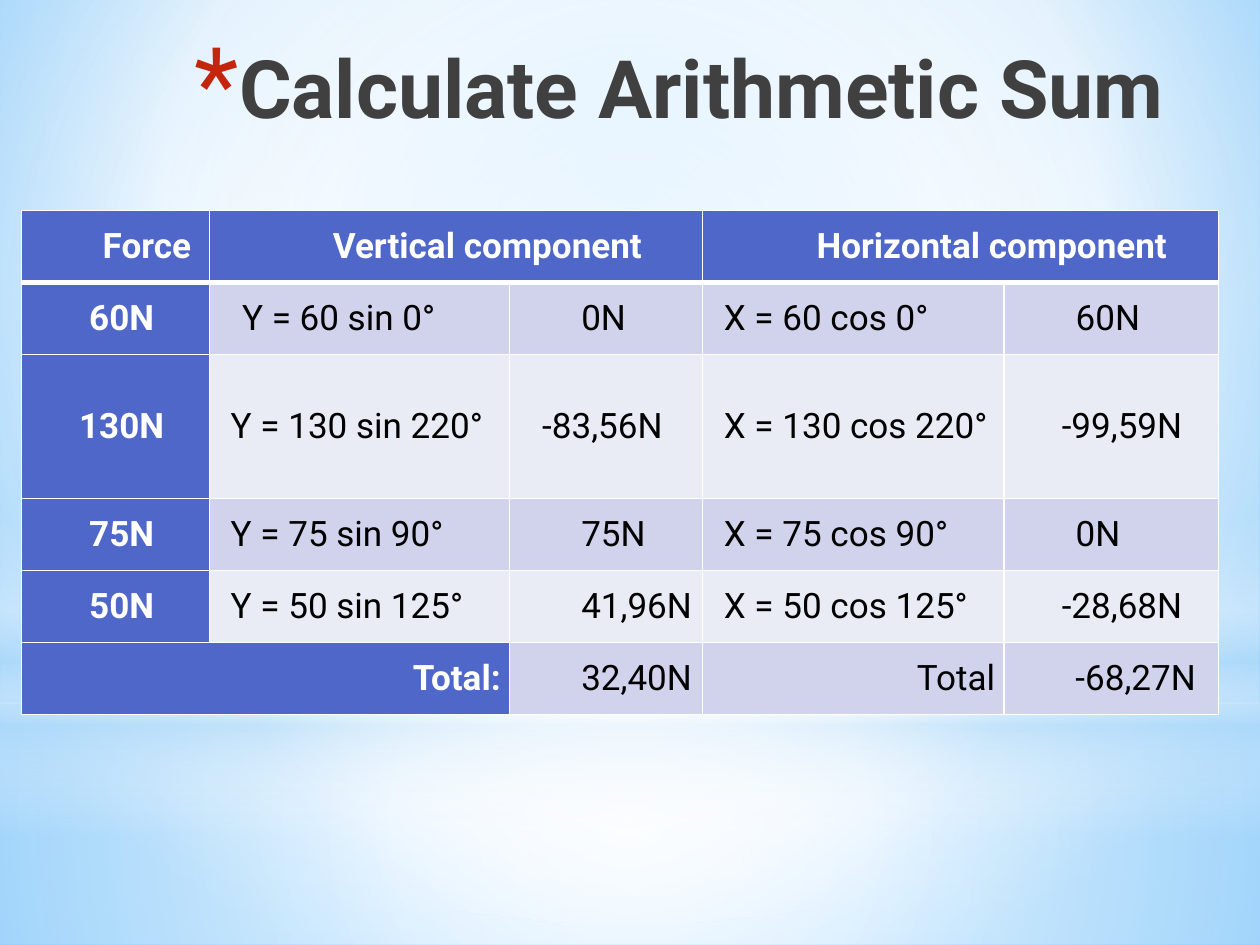
import pptx
import pptx.dml.color
import pptx.enum.shapes
import pptx.enum.text
import pptx.oxml
import pptx.oxml.ns
import pptx.util

Inches, Pt = pptx.util.Inches, pptx.util.Pt
ALIGN = pptx.enum.text.PP_ALIGN
SHAPE = pptx.enum.shapes.MSO_SHAPE
NS = pptx.oxml.ns.nsdecls("a")
W, H = 10, 7.5
FONT = "Roboto"
C = {
    "white": "FFFFFF", "black": "000000", "title": "404040", "bullet": "C3260C",
    "head": "4E67C8", "band": "D0D3EB", "pale": "E9EBF5",
    "sky": "B4DCFA", "bg_mid": "9ED5FF", "bg_edge": "5BB9FF",
}
COLUMNS = [1.49, 2.38, 1.53, 2.39, 1.7]
ROW_UNITS = [1, 1, 2, 1, 1, 1]
ROWS = [
    ["Force", "Vertical component", None, "Horizontal component", None],
    ["60N", "Y = 60 sin 0°", "0N", "X = 60 cos 0°", "60N"],
    ["130N", "Y = 130 sin 220°", "-83,56N", "X = 130 cos 220°", "-99,59N"],
    ["75N", "Y = 75 sin 90°", "75N", "X = 75 cos 90°", "0N"],
    ["50N", "Y = 50 sin 125°", "41,96N", "X = 50 cos 125°", "-28,68N"],
    ["Total:", None, "32,40N", "Total", "-68,27N"],
]
LAST = len(ROWS) - 1
BODY_INDENTS = [0.1, 0.1, 0.5, 0.1, 0.39]
INDENTS = {(1, 1): 0.19, (1, 4): 0.5, (2, 2): 0.19, (3, 4): 0.5,
           (LAST, 0): 0.5, (LAST, 3): 0.5}
ALIGNS = {(LAST, 0): ALIGN.RIGHT, (LAST, 3): ALIGN.RIGHT, (LAST, 4): ALIGN.CENTER}


def rgb(name):
    return pptx.dml.color.RGBColor.from_string(C[name])


def fill_gradient(fill, holder, stops, focus=None):
    """Fill with (position, colour, opacity) stops, circular round focus or downwards."""
    fill.solid()
    gs = "".join(
        f'<a:gs pos="{pos * 1000}"><a:srgbClr val="{C[name]}">'
        f'<a:alpha val="{alpha * 1000}"/></a:srgbClr></a:gs>'
        for pos, name, alpha in stops)
    if focus:
        sides = " ".join(f'{k}="{v * 1000}"' for k, v in zip("ltrb", focus))
        way = f'<a:path path="circle"><a:fillToRect {sides}/></a:path>'
    else:
        way = '<a:lin ang="5400000" scaled="0"/>'
    solid = holder.find(pptx.oxml.ns.qn("a:solidFill"))
    holder.replace(solid, pptx.oxml.parse_xml(
        f'<a:gradFill {NS} rotWithShape="1"><a:gsLst>{gs}</a:gsLst>{way}</a:gradFill>'))


def add_backdrop(s, x, y, w, h):
    fill = s.background.fill
    fill.solid()
    fill_gradient(fill, s.element.xpath(".//p:bgPr")[0],
                  [(0, "bg_mid", 100), (60, "white", 100), (100, "bg_edge", 100)],
                  (20, 10, 20, 60))
    centre = (50, 50, 50, 50)
    horizon = 0.744
    glows = [
        (SHAPE.RECTANGLE, horizon, 1 - horizon, centre,
         [(0, "white", 91), (37, "white", 76), (100, "sky", 79)]),
        (SHAPE.RECTANGLE, 0, horizon, centre,
         [(0, "white", 89), (48, "white", 62), (100, "sky", 79)]),
        (SHAPE.RECTANGLE, 0.55, 0.333, None,
         [(0, "white", 0), (29, "white", 30), (45, "sky", 40),
          (55, "white", 26), (65, "sky", 60), (100, "white", 0)]),
        (SHAPE.OVAL, 0.233, horizon, centre, [(0, "white", 100), (56, "white", 0)]),
    ]
    for kind, top, height, focus, stops in glows:
        sp = s.shapes.add_shape(kind, Inches(x), Inches(y + top * h),
                                Inches(w), Inches(height * h))
        sp.shadow.inherit = False
        sp.line.fill.background()
        fill_gradient(sp.fill, sp.element.spPr, stops, focus)


def format_run(p, size, color, bold):
    font = p.runs[0].font
    font.name, font.size, font.bold = FONT, Pt(size), bold
    font.color.rgb = rgb(color)


def set_indent(p, left, first=0):
    pPr = p._p.get_or_add_pPr()
    pPr.set("marL", str(Inches(left)))
    pPr.set("indent", str(Inches(first)))
    return pPr


def add_title(s, x, y, w, h):
    tf = s.shapes.add_textbox(Inches(x), Inches(y), Inches(w), Inches(h)).text_frame
    tf.word_wrap = True
    p = tf.paragraphs[0]
    p.text = "Calculate Arithmetic Sum"
    p.alignment = ALIGN.RIGHT
    format_run(p, 46, "title", True)
    pPr = set_indent(p, 0.35, -0.35)
    for tag in (f'<a:buClr {NS}><a:srgbClr val="{C["bullet"]}"/></a:buClr>',
                f'<a:buSzPct {NS} val="128000"/>',
                f'<a:buFont {NS} typeface="{FONT}"/>',
                f'<a:buChar {NS} char="*"/>'):
        pPr.append(pptx.oxml.parse_xml(tag))


def set_borders(cell, bottom):
    tcPr = cell._tc.get_or_add_tcPr()
    for i, (side, width) in enumerate(zip("LRTB", (1, 1, 1, bottom))):
        tcPr.insert(i, pptx.oxml.parse_xml(
            f'<a:ln{side} {NS} w="{Pt(width)}"><a:solidFill>'
            f'<a:srgbClr val="{C["white"]}"/></a:solidFill></a:ln{side}>'))


def style_cell(cell, r, c, text):
    strong = r == 0 or c == 0 or (r == LAST and c == 1)
    cell.fill.solid()
    cell.fill.fore_color.rgb = rgb("head" if strong else "band" if r % 2 else "pale")
    if r == LAST and not strong:
        cell.fill.fore_color.rgb = rgb("band")
    set_borders(cell, 3 if r == 0 else 1)
    cell.vertical_anchor = pptx.enum.text.MSO_ANCHOR.MIDDLE
    cell.margin_left = cell.margin_right = Inches(0.07)
    cell.margin_top = cell.margin_bottom = 0
    if text is None:
        return
    p = cell.text_frame.paragraphs[0]
    p.text = text
    p.alignment = ALIGNS.get((r, c), ALIGN.CENTER if strong else ALIGN.LEFT)
    set_indent(p, 0.5 if r == 0 else INDENTS.get((r, c), BODY_INDENTS[c]))
    format_run(p, 20, "white" if strong else "black", strong)


def add_force_table(s, x, y, w, h):
    table = s.shapes.add_table(len(ROWS), len(COLUMNS), Inches(x), Inches(y),
                               Inches(w), Inches(h)).table
    for column, width in zip(table.columns, COLUMNS):
        column.width = Inches(w * width / sum(COLUMNS))
    for row, units in zip(table.rows, ROW_UNITS):
        row.height = Inches(h * units / sum(ROW_UNITS))
    for r, texts in enumerate(ROWS):
        for c, text in enumerate(texts):
            style_cell(table.cell(r, c), r, c, text)
            if text is None:
                table.cell(r, c - 1).merge(table.cell(r, c))


def main():
    prs = pptx.Presentation()
    prs.slide_width, prs.slide_height = Inches(W), Inches(H)
    s = prs.slides.add_slide(prs.slide_layouts[6])
    add_backdrop(s, 0, 0, W, H)
    add_title(s, 0.83, 0.25, 8.5, 1.25)
    add_force_table(s, 0.17, 1.67, 9.5, 4)
    prs.save("out.pptx")


if __name__ == "__main__":
    main()
